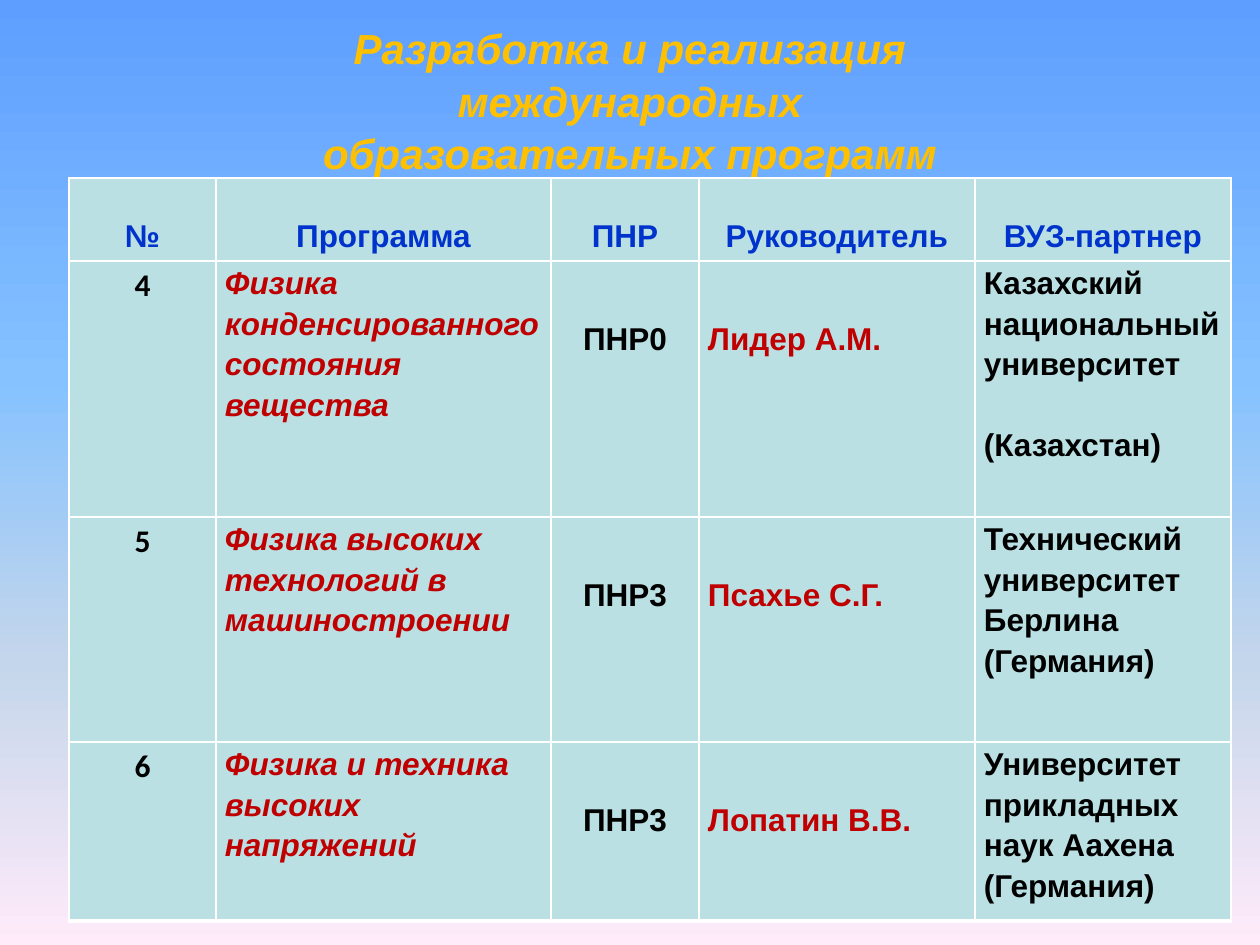
"""Build a slide with a table of international educational programmes."""
from pptx import Presentation
from pptx import oxml, util as u
from pptx.dml.color import RGBColor
from pptx.enum import text
from pptx.oxml import ns

PX = u.Inches(1) // 126
GOLD = RGBColor(0xFF, 0xC0, 0x00)
BLUE = RGBColor(0x00, 0x33, 0xCC)
RED = RGBColor(0xC0, 0x00, 0x00)
BLACK = RGBColor(0x00, 0x00, 0x00)
PALE_TEAL = RGBColor(0xBB, 0xE0, 0xE3)
WHITE = RGBColor(0xFF, 0xFF, 0xFF)
SKY = [
    (0, RGBColor(0x5E, 0x9E, 0xFF)),
    (40, RGBColor(0x85, 0xC2, 0xFF)),
    (70, RGBColor(0xC4, 0xD6, 0xEB)),
    (100, RGBColor(0xFF, 0xEB, 0xFA)),
]
LEFT, CENTER = text.PP_ALIGN.LEFT, text.PP_ALIGN.CENTER

TITLE = "Разработка и реализация\vмеждународных\vобразовательных программ"
COLUMN_WIDTHS = [147, 335, 148, 276, 256]
ROW_HEIGHTS = [83, 256, 225, 179]
ROWS = [
    ["№", "Программа", "ПНР", "Руководитель", "ВУЗ-партнер"],
    ["4", "Физика конденсированного состояния вещества", "ПНР0", "Лидер А.М.",
     "Казахский национальный университет\n(Казахстан)"],
    ["5", "Физика высоких технологий в машиностроении", "ПНР3", "Псахье С.Г.",
     "Технический университет Берлина (Германия)"],
    ["6", "Физика и техника высоких напряжений", "ПНР3", "Лопатин В.В.",
     "Университет прикладных наук Аахена (Германия)"],
]
HEADER_STYLE = ("Arial", BLUE, CENTER, False, 6)
COLUMN_STYLES = [
    ("Calibri", BLACK, CENTER, False, 6),
    ("Arial", RED, LEFT, True, 0),
    ("Arial", BLACK, CENTER, False, 56),
    ("Arial", RED, LEFT, False, 56),
    ("Arial", BLACK, LEFT, False, 0),
]


def style_paragraph(paragraph, name, size, color, align, italic):
    paragraph.alignment = align
    font = paragraph.font
    font.name, font.size, font.bold, font.italic = name, u.Pt(size), True, italic
    font.color.rgb = color


def add_border(cell, side, points):
    cell._tc.get_or_add_tcPr().append(oxml.parse_xml(
        f'<a:ln{side} {ns.nsdecls("a")} w="{u.Pt(points)}"><a:solidFill>'
        f'<a:srgbClr val="{WHITE}"/></a:solidFill></a:ln{side}>'))


presentation = Presentation()
presentation.slide_width, presentation.slide_height = 1260 * PX, 945 * PX
slide = presentation.slides.add_slide(presentation.slide_layouts[6])

background = slide.background.fill
background.gradient()
background.gradient_angle = 270
stops = slide.element.find(".//" + ns.qn("a:gsLst"))
for stop in list(stops):
    stops.remove(stop)
for percent, color in SKY:
    stops.append(oxml.parse_xml(
        f'<a:gs {ns.nsdecls("a")} pos="{percent * 1000}"><a:srgbClr val="{color}"/></a:gs>'))

title = slide.shapes.add_textbox(63 * PX, 20 * PX, 1134 * PX, 158 * PX).text_frame
title.word_wrap = True
title.vertical_anchor = text.MSO_ANCHOR.MIDDLE
title.text = TITLE
title.paragraphs[0].line_spacing = 1.05
style_paragraph(title.paragraphs[0], "Arial", 24, GOLD, CENTER, True)

table = slide.shapes.add_table(
    len(ROWS), len(COLUMN_WIDTHS), 69 * PX, 178 * PX,
    sum(COLUMN_WIDTHS) * PX, sum(ROW_HEIGHTS) * PX).table
table.first_row = table.horz_banding = False
for column, width in zip(table.columns, COLUMN_WIDTHS):
    column.width = width * PX
for row, height in zip(table.rows, ROW_HEIGHTS):
    row.height = height * PX

for row_index, row in enumerate(ROWS):
    for column_index, words in enumerate(row):
        cell = table.cell(row_index, column_index)
        is_header = row_index == 0
        is_body = not is_header and column_index > 0
        style = HEADER_STYLE if is_header else COLUMN_STYLES[column_index]
        name, color, align, italic, top = style
        for side in "LRTB":
            is_table_bottom = side == "B" and row_index == len(ROWS) - 1
            add_border(cell, side, 3 if is_table_bottom else 1)
        cell.fill.solid()
        cell.fill.fore_color.rgb = PALE_TEAL
        cell.vertical_anchor = text.MSO_ANCHOR.BOTTOM if is_header else text.MSO_ANCHOR.TOP
        cell.margin_top = top * PX
        if is_body:
            cell.margin_left = cell.margin_right = 9 * PX
            cell.margin_bottom = 0
        cell.text = words
        for index, paragraph in enumerate(cell.text_frame.paragraphs):
            if is_body:
                paragraph.line_spacing = 1.15
            if index:
                paragraph.space_before = u.Pt(23)
            style_paragraph(paragraph, name, 18, color, align, italic)

presentation.save("out.pptx")
